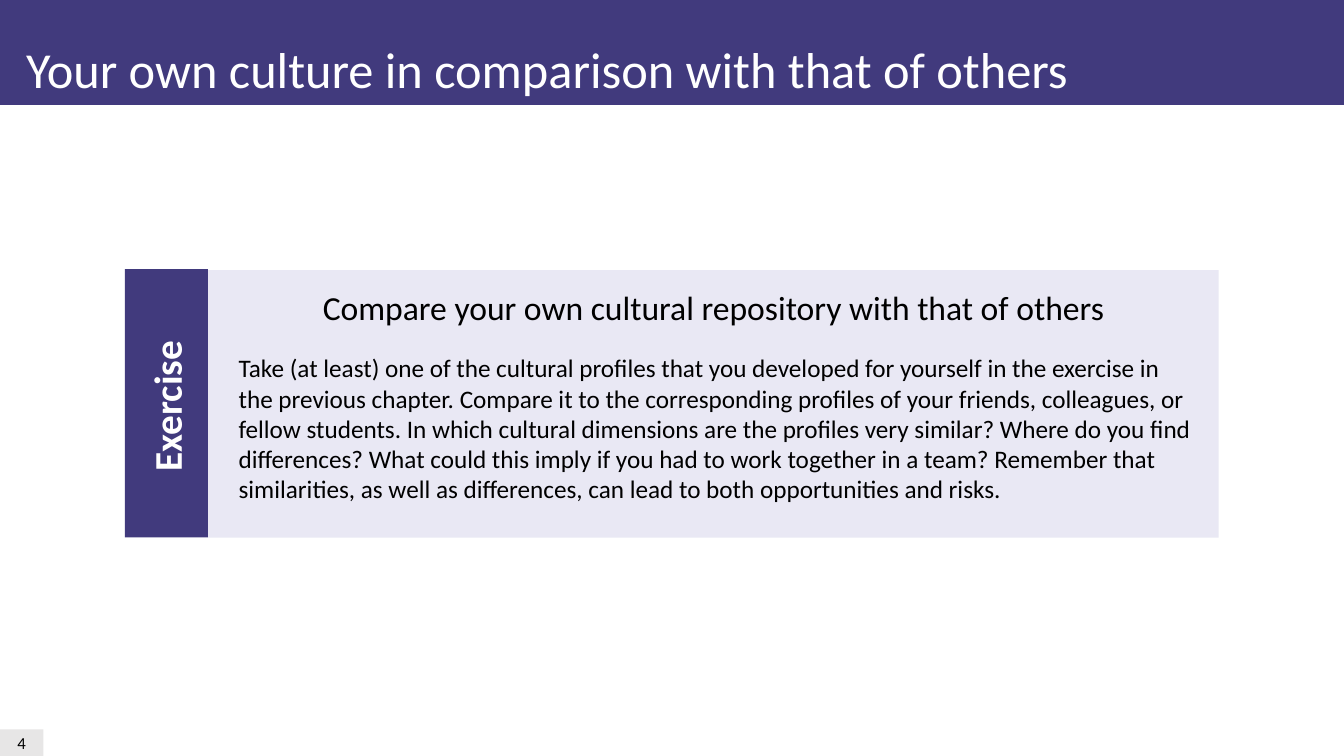
import pptx
import pptx.util
import pptx.dml.color
import pptx.enum.shapes
import pptx.enum.text

Pt = pptx.util.Pt
ALIGN = pptx.enum.text.PP_ALIGN
ANCHOR = pptx.enum.text.MSO_ANCHOR
HUES = {"violet": "413A7D", "pale": "E9E8F4", "grey": "E7E6E6",
        "white": "FFFFFF", "black": "000000"}


def add_rect(home, box, hue):
    rect = home.shapes.add_shape(pptx.enum.shapes.MSO_SHAPE.RECTANGLE, *map(Pt, box))
    rect.shadow.inherit = False
    rect.fill.solid()
    rect.fill.fore_color.rgb = pptx.dml.color.RGBColor.from_string(HUES[hue])
    rect.line.fill.background()
    return rect


def add_words(shape, words, size, hue, align=ALIGN.LEFT, bold=False, wrap=True):
    frame = shape.text_frame
    frame.word_wrap = wrap
    para = frame.paragraphs[0]
    para.alignment = align
    run = para.add_run()
    run.text = words
    run.font.name = "Calibri"
    run.font.size = Pt(size)
    run.font.bold = bold
    run.font.color.rgb = pptx.dml.color.RGBColor.from_string(HUES[hue])


deck = pptx.Presentation()
deck.slide_width, deck.slide_height = Pt(960), Pt(540)
slide = deck.slides.add_slide(deck.slide_layouts[6])

# Page number
page = add_rect(slide, (0, 521, 31, 19), "grey")
page.text_frame.vertical_anchor = ANCHOR.MIDDLE
add_words(page, "4", 12, "black", ALIGN.CENTER)

# Title band
add_rect(slide, (0, -0.7, 960, 75.6), "violet")
title = slide.shapes.add_textbox(Pt(11.5), Pt(23.8), Pt(766), Pt(51))
add_words(title, "Your own culture in comparison with that of others", 36, "white", wrap=False)

# Exercise panel
panel = slide.shapes.add_group_shape()
add_rect(panel, (148.5, 193, 722, 191), "pale")
add_rect(panel, (89.3, 192.2, 59.2, 191.8), "violet")

head = panel.shapes.add_textbox(Pt(163.4), Pt(201.6), Pt(692.6), Pt(24))
add_words(head, "Compare your own cultural repository with that of others",
          24, "black", ALIGN.CENTER)

label = panel.shapes.add_textbox(Pt(63.4), Pt(267.8), Pt(111), Pt(41))
label.rotation = 270
add_words(label, "Exercise", 28, "white", bold=True)

task = panel.shapes.add_textbox(Pt(163.4), Pt(248.4), Pt(698.4), Pt(116.6))
add_words(task, "Take (at least) one of the cultural profiles that you developed for "
          "yourself in the exercise in the previous chapter. Compare it to the "
          "corresponding profiles of your friends, colleagues, or fellow students. "
          "In which cultural dimensions are the profiles very similar? Where do you "
          "find differences? What could this imply if you had to work together in a "
          "team? Remember that similarities, as well as differences, can lead to both "
          "opportunities and risks.", 18, "black")

deck.save("out.pptx")
